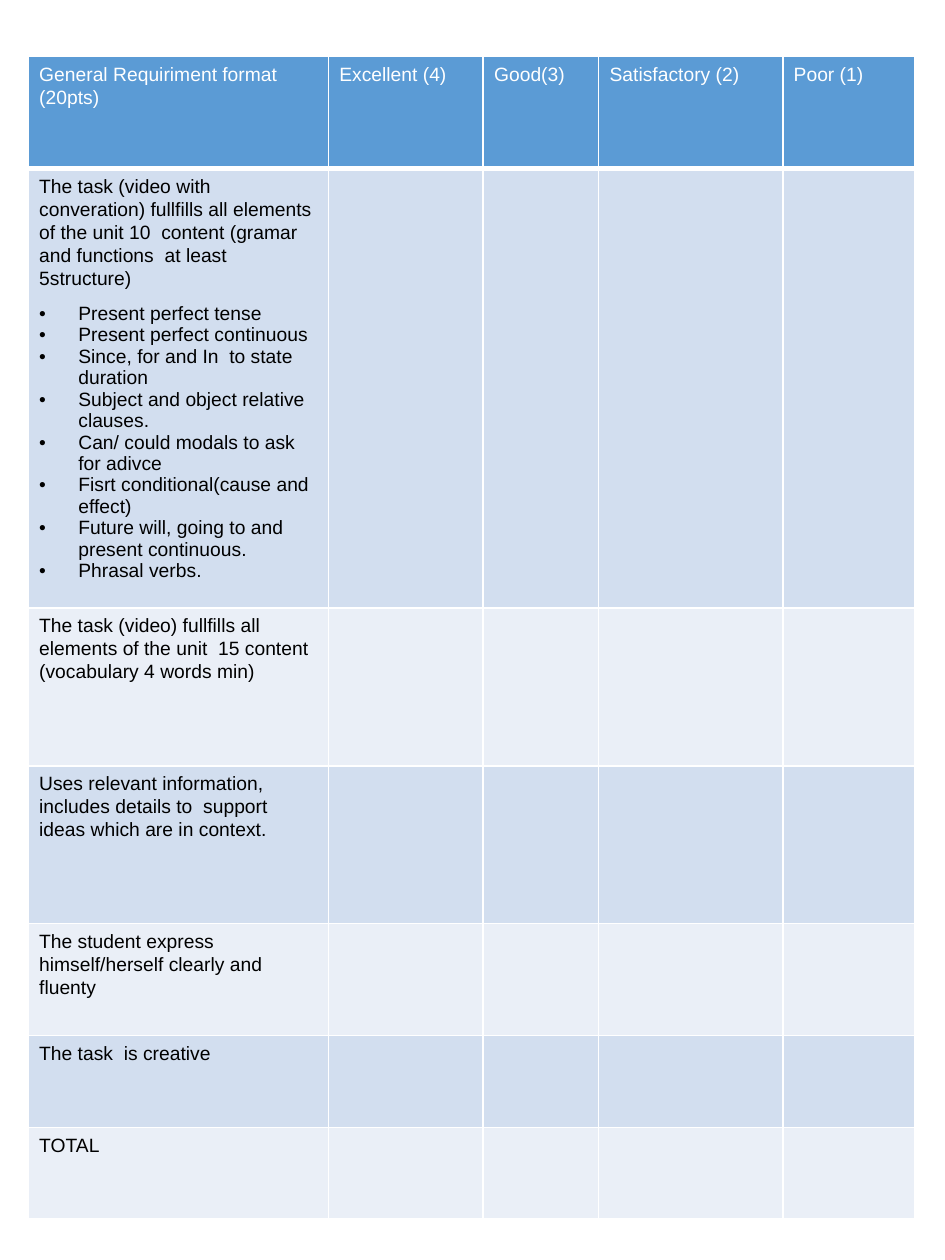
import pptx
import pptx.dml.color
import pptx.oxml.ns
import pptx.util
from lxml import etree

Cm, Pt = pptx.util.Cm, pptx.util.Pt
RGBColor = pptx.dml.color.RGBColor
qn = pptx.oxml.ns.qn

COLORS = {
    "header": "5B9BD5",
    "odd_band": "D2DEEF",
    "even_band": "EAEFF7",
    "border": "FFFFFF",
    "header_text": "FFFFFF",
    "text": "000000",
}
COLUMN_WIDTHS = [6.05, 3.12, 2.33, 3.71, 2.67]
ROW_HEIGHTS = [2.26, 8.86, 3.18, 3.18, 2.26, 1.85, 1.85]
MARGINS = {
    "margin_left": Cm(0.22),
    "margin_right": Cm(0.22),
    "margin_top": Cm(0.12),
    "margin_bottom": Cm(0.12),
}
STATEMENT_FORMAT = {"line_spacing": 1.07, "space_after": Pt(8)}
BULLET_FORMAT = {"line_spacing": 1.0, "space_after": Pt(0)}

HEADINGS = [
    "General Requiriment format (20pts)",
    "Excellent (4)",
    "Good(3)",
    "Satisfactory (2)",
    "Poor (1)",
]
GRAMMAR_POINTS = [
    "Present perfect tense",
    "Present perfect continuous",
    "Since, for and In  to state duration",
    "Subject and object relative clauses.",
    "Can/ could modals to ask for adivce",
    "Fisrt conditional(cause and effect)",
    "Future will, going to and present continuous.",
    "Phrasal verbs.",
]
CRITERIA = [
    ("The task (video with converation) fullfills all elements of the unit 10  content "
     "(gramar and functions  at least 5structure)", GRAMMAR_POINTS),
    ("The task (video) fullfills all elements of the unit  15 content "
     "(vocabulary 4 words min)", []),
    ("Uses relevant information, includes details to  support ideas "
     "which are in context.", []),
    ("The student express himself/herself clearly and fluenty", []),
    ("The task  is creative", []),
    ("TOTAL", []),
]


def set_attributes(target, values):
    for name, value in values.items():
        setattr(target, name, value)


def add_borders(cell, bottom_width):
    properties = cell._tc.get_or_add_tcPr()
    widths = {"a:lnL": 1, "a:lnR": 1, "a:lnT": 1, "a:lnB": bottom_width}
    for side, width in widths.items():
        line = etree.SubElement(properties, qn(side), w=str(Pt(width)))
        fill = etree.SubElement(line, qn("a:solidFill"))
        etree.SubElement(fill, qn("a:srgbClr"), val=COLORS["border"])


def add_bullet(paragraph):
    properties = paragraph._p.get_or_add_pPr()
    indent = Cm(0.79)
    properties.set("marL", str(indent))
    properties.set("indent", str(-indent))
    etree.SubElement(properties, qn("a:buFont"), typeface="Arial")
    etree.SubElement(properties, qn("a:buChar"), char="•")


def write_paragraph(paragraph, text, color, paragraph_format):
    set_attributes(paragraph, paragraph_format)
    run = paragraph.add_run()
    run.text = text
    set_attributes(run.font, {"name": "Arial", "size": Pt(11)})
    run.font.color.rgb = RGBColor.from_string(COLORS[color])


def style_cell(cell, fill, bottom_width=1):
    set_attributes(cell, MARGINS)
    add_borders(cell, bottom_width)
    cell.fill.solid()
    cell.fill.fore_color.rgb = RGBColor.from_string(COLORS[fill])


def add_rubric(slide, left, top):
    rubric = slide.shapes.add_table(
        len(ROW_HEIGHTS), len(COLUMN_WIDTHS), left, top,
        Cm(sum(COLUMN_WIDTHS)), Cm(sum(ROW_HEIGHTS))).table
    for column, width in zip(rubric.columns, COLUMN_WIDTHS):
        column.width = Cm(width)
    for row, height in zip(rubric.rows, ROW_HEIGHTS):
        row.height = Cm(height)

    for cell, heading in zip(rubric.rows[0].cells, HEADINGS):
        style_cell(cell, "header", bottom_width=3)
        write_paragraph(cell.text_frame.paragraphs[0], heading,
                        "header_text", STATEMENT_FORMAT)

    for number, (statement, points) in enumerate(CRITERIA, start=1):
        for cell in rubric.rows[number].cells:
            style_cell(cell, "odd_band" if number % 2 else "even_band")
        criterion = rubric.cell(number, 0).text_frame
        write_paragraph(criterion.paragraphs[0], statement, "text", STATEMENT_FORMAT)
        for point in points:
            paragraph = criterion.add_paragraph()
            set_attributes(paragraph, BULLET_FORMAT)
            add_bullet(paragraph)
            write_paragraph(paragraph, point, "text", BULLET_FORMAT)


def main():
    deck = pptx.Presentation()
    deck.slide_width, deck.slide_height = Cm(19.05), Cm(25.4)
    slide = deck.slides.add_slide(deck.slide_layouts[6])
    add_rubric(slide, Cm(0.57), Cm(1.14))
    deck.save("out.pptx")


if __name__ == "__main__":
    main()
